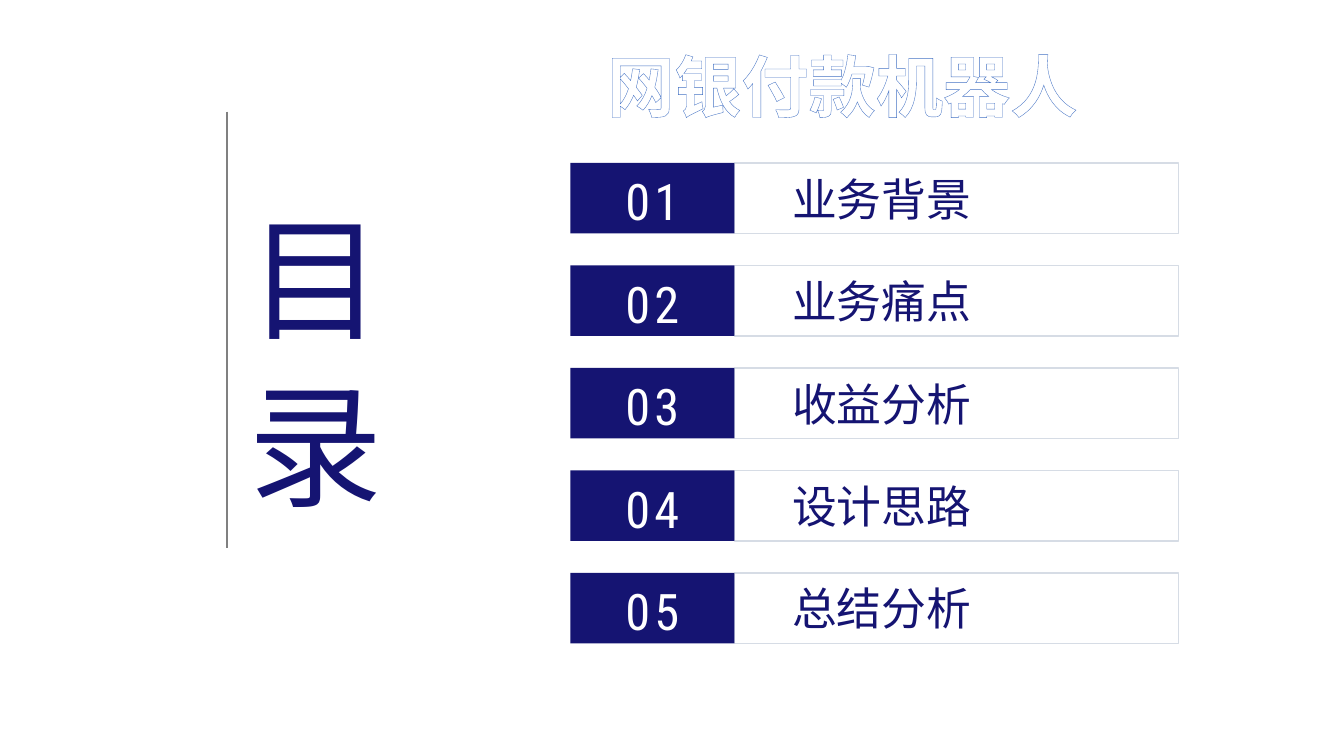
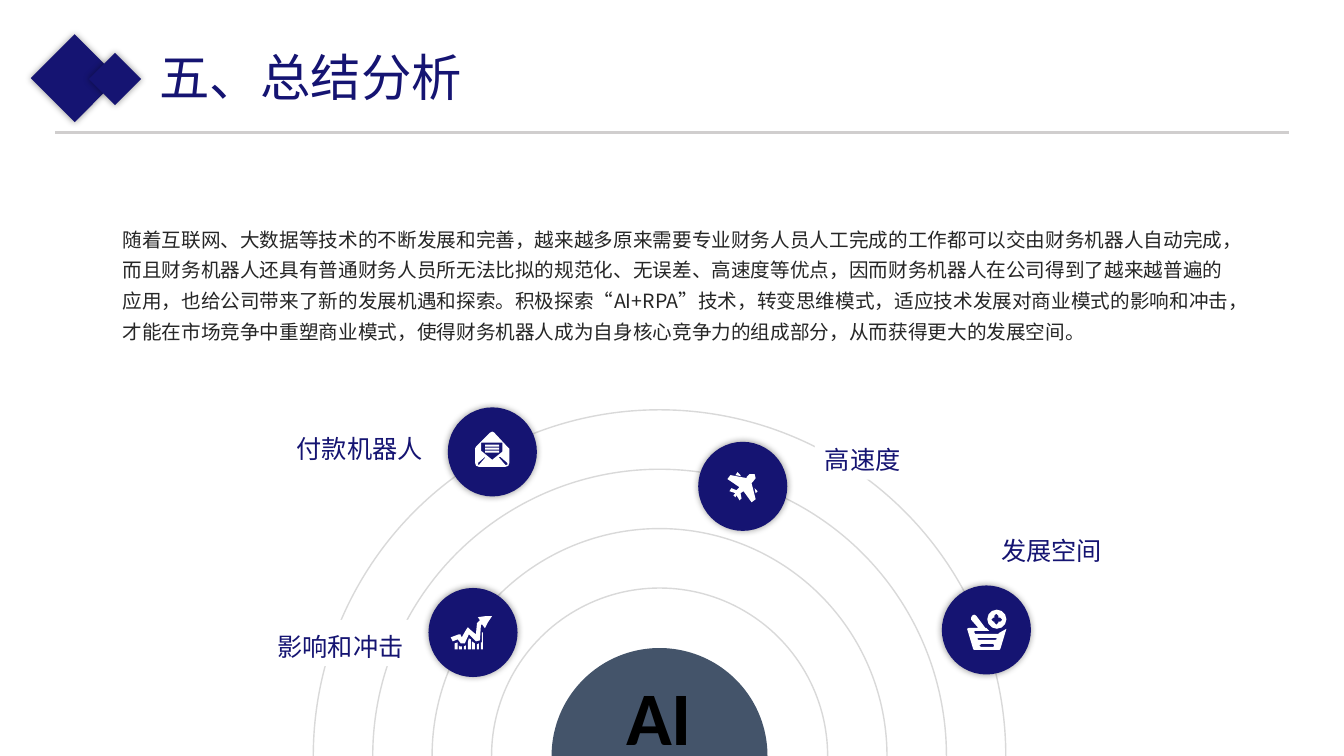
from pptx import Presentation
from pptx.dml.color import RGBColor
from pptx.enum.dml import MSO_PATTERN
from pptx.enum.shapes import MSO_CONNECTOR, MSO_SHAPE
from pptx.enum.text import MSO_ANCHOR, MSO_AUTO_SIZE, PP_ALIGN
from pptx.oxml import parse_xml
from pptx.oxml.ns import nsdecls, qn
from pptx.util import Emu, Inches, Pt

SLIDE_WIDTH, SLIDE_HEIGHT = Inches(13.33), Inches(7.5)
CELL = SLIDE_HEIGHT / 45
ICON_UNIT = Inches(0.01)
NAVY, WHITE, SLATE, INK = "151472", "FFFFFF", "44546A", "262626"
FRAME_GREY, RING_GREY, RULE_GREY, BAR_GREY = "D6DCE5", "D9D9D9", "D0CECE", "808080"
HEADING_FONT, BODY_FONT = "Noto Sans CJK JP", "Noto Sans CJK SC"
NUMBER_FONT, DISPLAY_FONT = "Roboto Condensed", "Calibri"
BADGE = 5.3

CHAPTERS = ["业务背景", "业务痛点", "收益分析", "设计思路", "总结分析"]
SUMMARY = (
    "随着互联网、大数据等技术的不断发展和完善，越来越多原来需要专业财务人员人工完成的工作都可以交由财务机器人自动完成，"
    "而且财务机器人还具有普通财务人员所无法比拟的规范化、无误差、高速度等优点，因而财务机器人在公司得到了越来越普遍的应用，"
    "也给公司带来了新的发展机遇和探索。积极探索“AI+RPA”技术，转变思维模式，适应技术发展对商业模式的影响和冲击，"
    "才能在市场竞争中重塑商业模式，使得财务机器人成为自身核心竞争力的组成部分，从而获得更大的发展空间。"
)

ENVELOPE = [
    "59,39 61,41 61,55 60,58 57,59 31,59 28,58 27,55 27,41 28,39 42,25 44,24 46,25",
    "33,35 33,43 44,52 54,44 54,35",
    "37,37 37,39 51,39 51,37",
    "37,40 37,42 51,42 51,40",
    "37,43 37,45 51,45 51,43",
    "31,57 37,50 37,49 30,55 30,57",
    "59,55 52,49 51,49 51,50 57,57 59,57",
]
GROWTH_CHART = [
    "52,61 54,61 54,44 53,44 53,54 52,54",
    "63,28 59,34 56,40 53,36 52,37 51,52 47,53 40,46 36,55 32,55 29,51 24,53 22,49 30,46 "
    "32,46 32,47 33,49 37,42 39,39 41,41 47,46 48,36 48,35 49,34 51,32 49,29 56,28",
    "30,61 33,61 33,58 31,58 30,57",
    "26,61 29,61 29,54 26,55",
    "35,61 37,61 37,57 35,58",
    "39,61 42,61 42,51 40,50 39,54",
    "43,61 46,61 46,55 43,53",
    "48,61 50,61 50,55 48,56",
]
BASKET = [
    "39,58 37,60 39,61 51,61 52,60 51,58",
    "36,52 35,53 36,54 53,54 55,53 53,52",
    "32,29 34,30 43,42 44,42 47,45 33,45 32,46 33,48 56,48 57,47 64,43 58,63 57,64 32,64 "
    "31,63 25,43 27,42 36,42 29,34 29,32 30,30",
    "54,28 52,30 52,32 51,32 49,34 51,36 52,36 52,37 54,39 56,37 56,36 58,36 60,34 58,32 56,32 56,30",
    "54.5,24 59.3,25.3 62.7,28.7 64,33.5 62.7,38.3 59.3,41.7 54.5,43 49.7,41.7 46.3,38.3 "
    "45,33.5 46.3,28.7 49.7,25.3",
]
PLANE = [
    "56,32 57,36 54,40 53,41 57,57 53,60 45,49 42,51 43,56 41,58 38,53 37,55 35,53 37,51 "
    "31,49 33,46 38,48 41,45 29,37 32,33 48,36 48,35 51,32",
    "59,49 56,46 57,51",
    "39,30 37,33 42,34 42,33",
]

BADGES = [
    (28.15, 37.65, GROWTH_CHART),
    (29.3, 26.9, ENVELOPE),
    (44.2, 28.95, PLANE),
    (58.7, 37.5, BASKET),
]
BADGE_LABELS = [
    ("发展空间", 59, 31.2, PP_ALIGN.LEFT, None),
    ("高速度", 48.5, 25.8, PP_ALIGN.LEFT, WHITE),
    ("付款机器人", 12.05, 25.15, PP_ALIGN.RIGHT, None),
    ("影响和冲击", 10.9, 36.9, PP_ALIGN.RIGHT, WHITE),
]


def color(hex_code):
    """Turn a hex string into a colour."""
    return RGBColor.from_string(hex_code)


def grid(*cells):
    """Turn grid cells into lengths."""
    return [Emu(round(cell * CELL)) for cell in cells]


def paint(shape, fill=None, line=None, width=1, glow=False):
    """Set fill, outline and the soft shadow of a shape."""
    shape.shadow.inherit = False
    if fill:
        shape.fill.solid()
        shape.fill.fore_color.rgb = color(fill)
    else:
        shape.fill.background()
    if line:
        shape.line.color.rgb = color(line)
        shape.line.width = Pt(width)
    else:
        shape.line.fill.background()
    if glow:
        shape._element.spPr.find(qn("a:effectLst")).append(parse_xml(
            f'<a:outerShdw {nsdecls("a")} blurRad="{Pt(5)}" dist="0" dir="0" algn="ctr" rotWithShape="0">'
            '<a:srgbClr val="000000"><a:alpha val="40000"/></a:srgbClr></a:outerShdw>'))


def add_figure(slide, kind, box, **look):
    """Add a preset shape on the grid."""
    figure = slide.shapes.add_shape(kind, *grid(*box))
    paint(figure, **look)
    return figure


def add_disc(slide, center_x, center_y, diameter, **look):
    """Add a circle around a centre."""
    box = (center_x - diameter / 2, center_y - diameter / 2, diameter, diameter)
    return add_figure(slide, MSO_SHAPE.OVAL, box, **look)


def add_rule(slide, start, end, tint, width):
    """Add a straight line without shadow."""
    rule = slide.shapes.add_connector(MSO_CONNECTOR.STRAIGHT, *grid(*start, *end))
    rule.line.color.rgb = color(tint)
    rule.line.width = Pt(width)
    rule._element.spPr.append(parse_xml(f'<a:effectLst {nsdecls("a")}/>'))


def add_icon(slide, left, top, outlines):
    """Draw an icon whose points count from the corner of its badge."""
    origin_x, origin_y = grid(left, top)
    contours = []
    for outline in outlines:
        pairs = [point.split(",") for point in outline.split()]
        contours.append([(origin_x + float(x) * ICON_UNIT, origin_y + float(y) * ICON_UNIT)
                         for x, y in pairs])
    builder = slide.shapes.build_freeform(*contours[0][0], scale=1.0)
    for index, contour in enumerate(contours):
        if index:
            builder.move_to(*contour[0])
        builder.add_line_segments(contour[1:], close=True)
    paint(builder.convert_to_shape(), fill=WHITE)


def write(shape, text, size, font=HEADING_FONT, tint=NAVY, bold=False, align=PP_ALIGN.LEFT,
          line_spacing=None, space_after=None, tracking=None, outline=None, hatch=None):
    """Write one formatted paragraph into a shape and return its text frame."""
    frame = shape.text_frame
    paragraph = frame.paragraphs[0]
    paragraph.alignment = align
    if line_spacing:
        paragraph.line_spacing = line_spacing
    if space_after:
        paragraph.space_after = Pt(space_after)
    run = paragraph.add_run()
    run.text = text
    run.font.size, run.font.bold, run.font.name = Pt(size), bold, font
    if hatch:
        run.font.fill.patterned()
        run.font.fill.pattern = MSO_PATTERN.LIGHT_DOWNWARD_DIAGONAL
        run.font.fill.fore_color.rgb = color(hatch)
        run.font.fill.back_color.rgb = color(WHITE)
    else:
        run.font.color.rgb = color(tint)
    properties = run._r.get_or_add_rPr()
    properties.find(qn("a:latin")).addnext(parse_xml(f'<a:ea {nsdecls("a")} typeface="{font}"/>'))
    if tracking:
        properties.set("spc", str(tracking * 100))
    if outline:
        tone, width = outline
        properties.insert(0, parse_xml(
            f'<a:ln {nsdecls("a")} w="{Pt(width)}"><a:solidFill><a:srgbClr val="{tone}"/></a:solidFill></a:ln>'))
    return frame


def add_text(slide, box, text, size, wrap=True, grow=True, fill=None, **style):
    """Add a text box on the grid."""
    holder = slide.shapes.add_textbox(*grid(*box))
    if fill:
        paint(holder, fill=fill)
    frame = write(holder, text, size, **style)
    frame.word_wrap = wrap
    frame.auto_size = MSO_AUTO_SIZE.SHAPE_TO_FIT_TEXT if grow else MSO_AUTO_SIZE.NONE
    return frame


def add_chapter(slide, number, name):
    """Add one row of the contents list."""
    top, height = 9.7 + 6.1 * (number - 1), 4.2
    add_figure(slide, MSO_SHAPE.RECTANGLE, (43.7, top, 26.45, height), line=FRAME_GREY)
    plate = add_figure(slide, MSO_SHAPE.RECTANGLE, (33.95, top, 9.75, height), fill=NAVY)
    frame = write(plate, f"{number:02}", 36, font=NUMBER_FONT, tint=WHITE,
                  align=PP_ALIGN.CENTER, tracking=3)
    frame.vertical_anchor = MSO_ANCHOR.MIDDLE
    frame.margin_bottom = 0
    add_text(slide, (46.55, top + 0.2, 11.9, 3.85), name, 32, wrap=False)


def add_heading(slide, text):
    """Add the section heading with its diamonds and rule."""
    add_rule(slide, (3.3, 7.9), (76.7, 7.9), RULE_GREY, 2.25)
    for left, top, side in [(2.6, 2.8, 3.7), (5.75, 3.6, 2.2)]:
        diamond = add_figure(slide, MSO_SHAPE.RECTANGLE, (left, top, side, side), fill=NAVY, glow=True)
        diamond.rotation = 315
    add_text(slide, (8.9, 2.45, 37.25, 4.25), text, 36)


def build_contents(slide):
    """Build the contents slide."""
    contents = add_text(slide, (12.7, 12, 10.9, 20.8), "目 录", 96, wrap=False)
    contents._txBody.bodyPr.set("vert", "eaVert")
    add_rule(slide, (13.5, 6.65), (13.5, 32.6), BAR_GREY, 1.5)
    for number, name in enumerate(CHAPTERS, 1):
        add_chapter(slide, number, name)
    add_text(slide, (29.45, 2.35, 41.35, 6.85), "网银付款机器人", 48, grow=False, font=DISPLAY_FONT,
             bold=True, align=PP_ALIGN.CENTER, hatch="8FAADC", outline=("4472C4", 1))


def build_summary(slide):
    """Build the summary slide with its rings and badges."""
    add_heading(slide, "五、总结分析")
    hub = (39.25, 45)
    for ring in range(4):
        add_disc(slide, *hub, 20 + 7.07 * ring, line=RING_GREY)
    add_disc(slide, *hub, 12.85, fill=SLATE)
    for center_x, center_y, icon in BADGES:
        add_disc(slide, center_x, center_y, BADGE, fill=NAVY, glow=True)
        add_icon(slide, center_x - BADGE / 2, center_y - BADGE / 2, icon)
    add_text(slide, (6.7, 12.85, 67.5, 7.8), SUMMARY, 14, font=BODY_FONT, tint=INK,
             line_spacing=1.3, space_after=8)
    for label, left, top, align, fill in BADGE_LABELS:
        add_text(slide, (left, top, 13.7, 2.75), label, 18, align=align, fill=fill, line_spacing=1.2)
    add_text(slide, (36.65, 39.55, 5.15, 6.05), "AI", 54, wrap=False, font=DISPLAY_FONT,
             tint="000000", bold=True, align=PP_ALIGN.CENTER, outline=(WHITE, 0.75))


def main():
    """Build and save the presentation."""
    deck = Presentation()
    deck.slide_width, deck.slide_height = SLIDE_WIDTH, SLIDE_HEIGHT
    for build in (build_contents, build_summary):
        build(deck.slides.add_slide(deck.slide_layouts[6]))
    deck.save("out.pptx")


if __name__ == "__main__":
    main()
